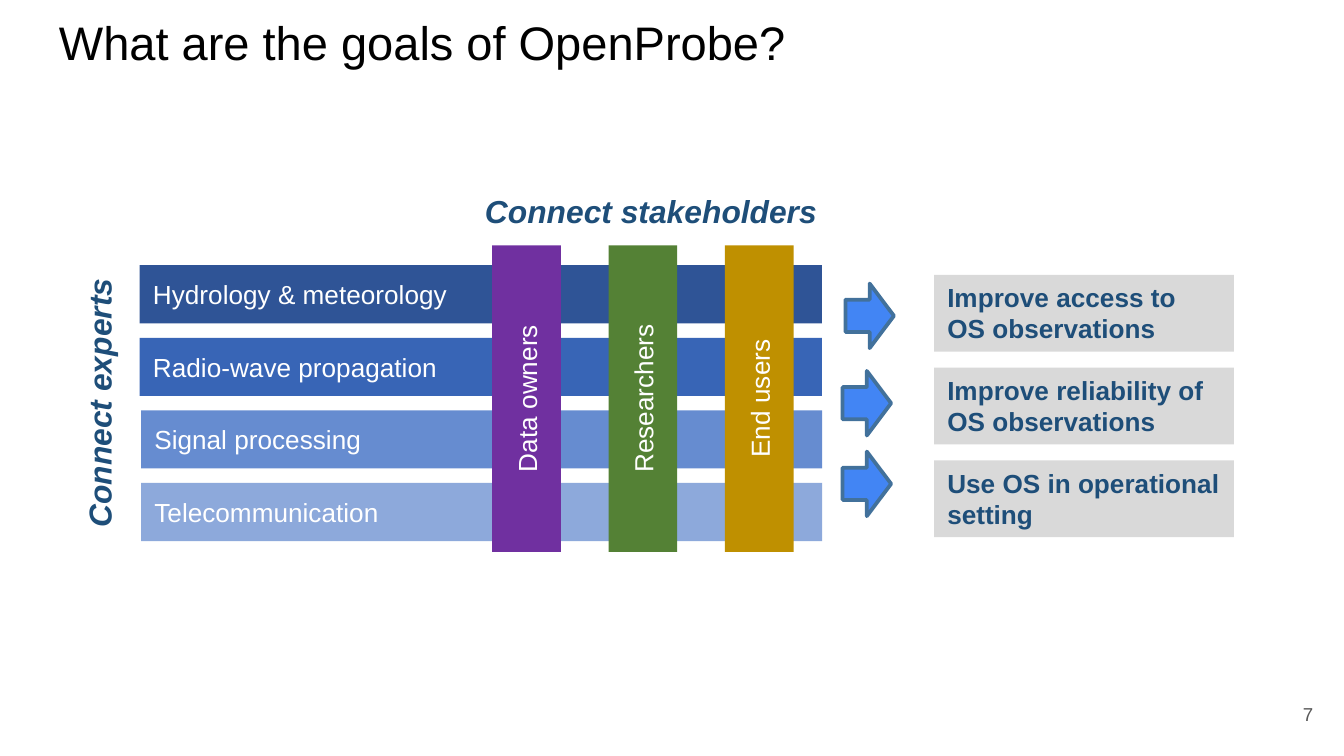
from pptx import Presentation
from pptx.dml.color import RGBColor
from pptx.enum.shapes import MSO_SHAPE
from pptx.enum.text import MSO_ANCHOR, PP_ALIGN
from pptx.util import Pt

RECT, ARROW = MSO_SHAPE.RECTANGLE, MSO_SHAPE.RIGHT_ARROW
TOP, MIDDLE = MSO_ANCHOR.TOP, MSO_ANCHOR.MIDDLE
LEFT, CENTER, RIGHT = PP_ALIGN.LEFT, PP_ALIGN.CENTER, PP_ALIGN.RIGHT
NAVY, WHITE = "1E4E79", "FFFFFF"

EXPERTS = [
    ("Hydrology & meteorology", "2F5496", 74.9),
    ("Radio-wave propagation", "3865B6", 74.9),
    ("Signal processing", "668CD0", 75.6),
    ("Telecommunication", "8DA9DB", 75.6),
]
STAKEHOLDERS = [
    ("Data owners", "7030A0"),
    ("Researchers", "548135"),
    ("End users", "BF9000"),
]
GOALS = [
    "Improve access to OS observations",
    "Improve reliability of OS observations",
    "Use OS in operational setting",
]
ARROWS = [(452.9, 151.9), (451.4, 198.7), (451.4, 241.9)]


def rgb(color):
    """Turn a hex string into a colour."""
    return RGBColor.from_string(color)


def set_text(sp, text, size, color, align=LEFT, anchor=TOP, inset=3.6, bold=False, italic=False):
    """Write one formatted paragraph into a shape."""
    tf = sp.text_frame
    tf.word_wrap = True
    tf.vertical_anchor = anchor
    tf.margin_left = tf.margin_right = Pt(7.2)
    tf.margin_top = tf.margin_bottom = Pt(inset)
    p = tf.paragraphs[0]
    p.text = text
    p.alignment = align
    font = p.runs[0].font
    font.name, font.size = "Arial", Pt(size)
    font.bold, font.italic = bold, italic
    font.color.rgb = rgb(color)


def add_label(s, box, text, size, color, rotation=0, **style):
    """Add a text box."""
    sp = s.shapes.add_textbox(*map(Pt, box))
    sp.rotation = rotation
    set_text(sp, text, size, color, **style)


def add_block(s, kind, box, fill, line=None):
    """Add a flat filled shape with an optional outline."""
    sp = s.shapes.add_shape(kind, *map(Pt, box))
    sp.shadow.inherit = False
    sp.fill.solid()
    sp.fill.fore_color.rgb = rgb(fill)
    if line:
        sp.line.color.rgb = rgb(line)
        sp.line.width = Pt(2)
    else:
        sp.line.fill.background()
    return sp


def add_experts(s):
    """Add the horizontal bars, which share a right edge."""
    for i, (text, fill, left) in enumerate(EXPERTS):
        sp = add_block(s, RECT, (left, 142.1 + 38.85 * i, 440.4 - left, 31.2), fill)
        set_text(sp, text, 14, WHITE, anchor=MIDDLE)


def add_stakeholders(s):
    """Add the upright bars that cross the experts."""
    for i, (text, fill) in enumerate(STAKEHOLDERS):
        sp = add_block(s, RECT, (200 + 62.35 * i, 195.1, 164.2, 36.8), fill)
        sp.rotation = 270
        set_text(sp, text, 14, WHITE, align=CENTER, anchor=MIDDLE)


def add_goals(s):
    """Add the goal boxes and the arrows that lead to them."""
    for i, (text, (left, top)) in enumerate(zip(GOALS, ARROWS)):
        sp = add_block(s, RECT, (500.4, 147.2 + 49.7 * i, 160.6, 41.2), "D9D9D9")
        set_text(sp, text, 14, NAVY, bold=True)
        add_block(s, ARROW, (left, top, 26, 34.6), "4285F4", "42719B")


def main():
    """Build the slide and save it."""
    prs = Presentation()
    prs.slide_width, prs.slide_height = Pt(720), Pt(405)
    s = prs.slides.add_slide(prs.slide_layouts[6])
    add_label(s, (24.5, 0, 671, 45.4), "What are the goals of OpenProbe?", 25.2, "000000", inset=7.2)
    add_label(s, (667.4, 367.2, 43.2, 31), "7", 10, "595959", align=RIGHT, anchor=MIDDLE, inset=7.2)
    add_label(s, (-13, 189.4, 152.6, 48.2), "Connect experts", 17, NAVY, 270, bold=True, italic=True)
    add_label(s, (246.2, 99.4, 205.2, 28.1), "Connect stakeholders", 17, NAVY,
              align=CENTER, bold=True, italic=True)
    add_experts(s)
    add_stakeholders(s)
    add_goals(s)
    prs.save("out.pptx")


if __name__ == "__main__":
    main()
